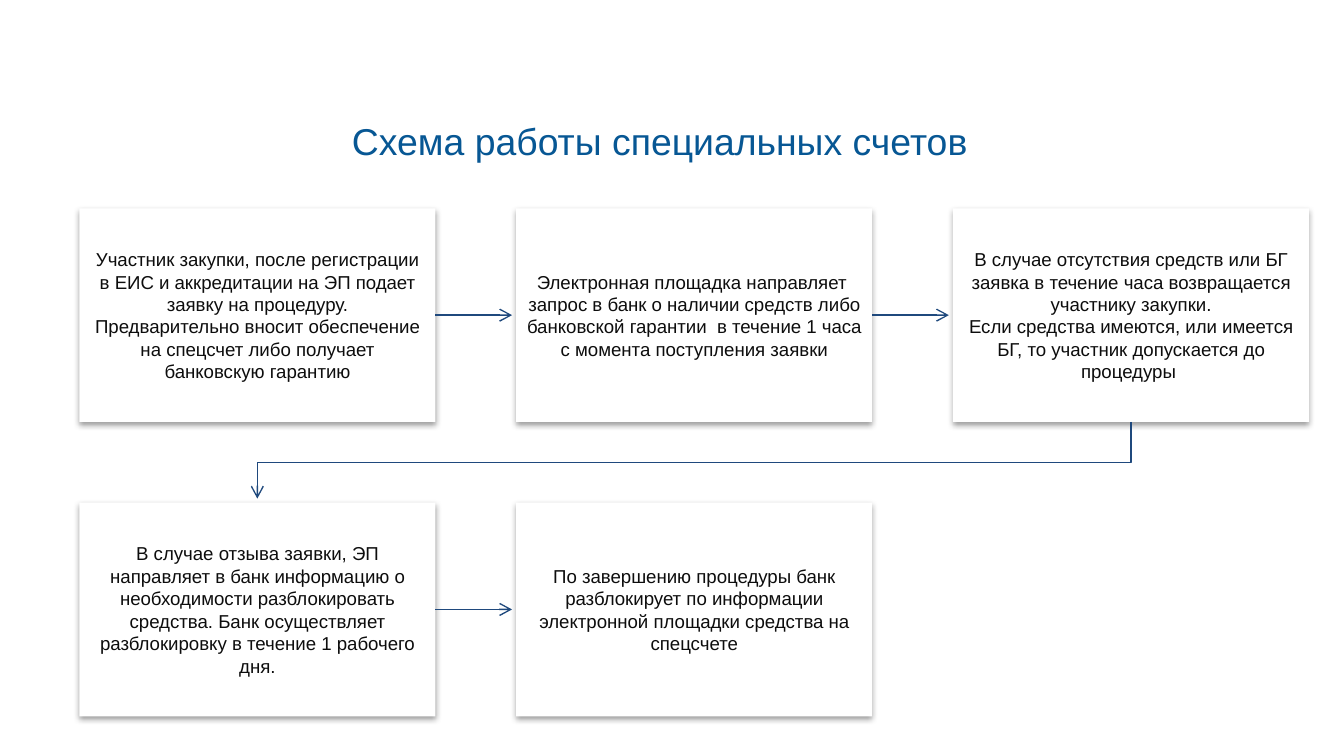
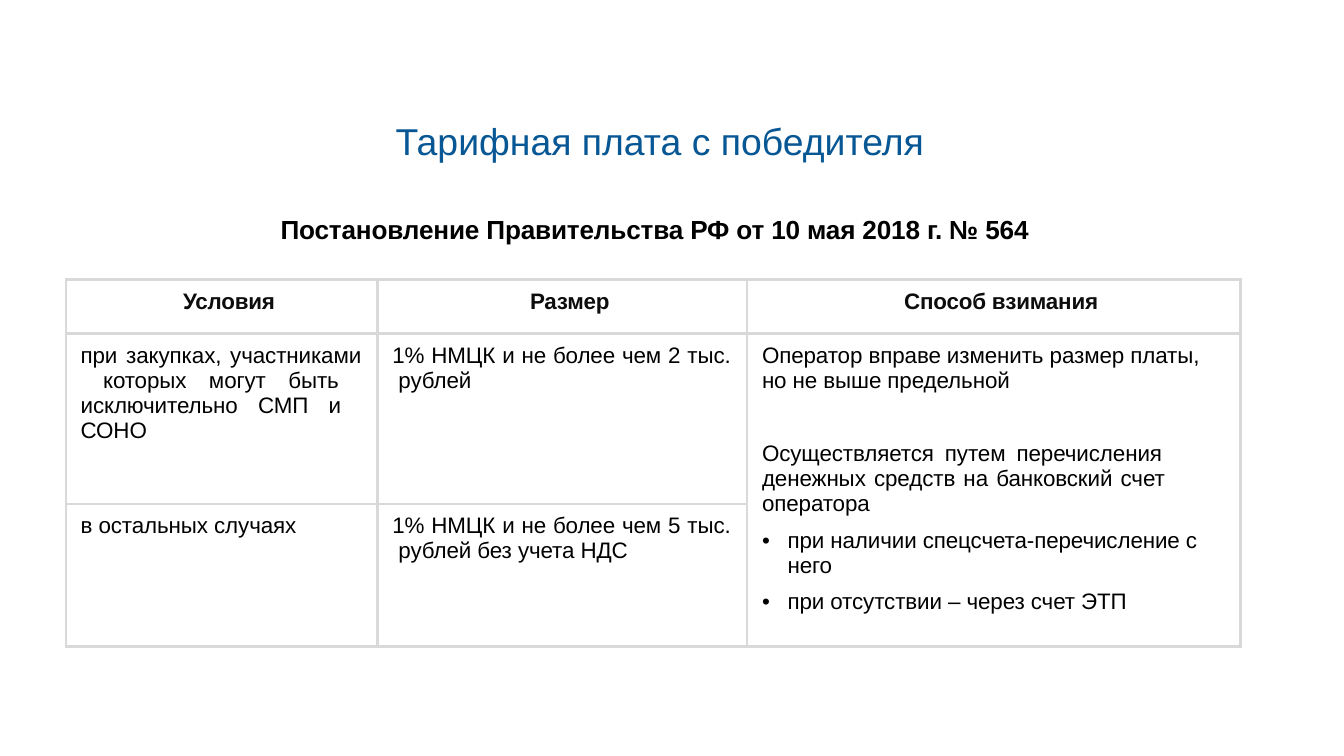
from dataclasses import dataclass
from typing import Any

from lxml.etree import SubElement
from pptx import Presentation
from pptx.dml.color import RGBColor
from pptx.enum.shapes import MSO_CONNECTOR, MSO_SHAPE
from pptx.enum.text import MSO_ANCHOR, PP_ALIGN
from pptx.oxml.ns import qn
from pptx.util import Inches, Pt

TITLE_BLUE = RGBColor(0x07, 0x57, 0x94)
ARROW_BLUE = RGBColor(0x1F, 0x49, 0x7D)
DARK = RGBColor(0x0D, 0x0D, 0x0D)
BLACK = RGBColor(0x00, 0x00, 0x00)
WHITE = RGBColor(0xFF, 0xFF, 0xFF)
BORDER_GREY = RGBColor(0xD9, 0xD9, 0xD9)
FONT = "Arial"

SLIDE_WIDTH = Inches(10)
SLIDE_HEIGHT = SLIDE_WIDTH * 9 // 16
BOX_WIDTH, BOX_HEIGHT = 2.65, 1.59
BOX_LEFT, BOX_TOP = 0.59, 1.55
COLUMN_STEP, ROW_STEP = 3.25, 2.19
ARROW_LENGTH = 0.57


@dataclass(frozen=True)
class TextStyle:
    size: float
    color: RGBColor
    bold: bool = False
    spacing: int = 0


@dataclass(frozen=True)
class Line:
    text: str
    align: PP_ALIGN = PP_ALIGN.CENTER
    left: float = 0
    right: float = 0
    indent: float = 0
    before: float = 0
    bullet: bool = False


@dataclass(frozen=True)
class Step:
    column: int
    row: int
    lines: tuple[str, ...]
    arrow: bool = False


@dataclass(frozen=True)
class CellText:
    row: int
    column: int
    lines: tuple[Line, ...]


TITLE_STYLE = TextStyle(20, TITLE_BLUE)
STEP_STYLE = TextStyle(10, DARK)
DECREE_STYLE = TextStyle(14, BLACK, True, -10)
HEADER_STYLE = TextStyle(12, DARK, True, -10)
BODY_STYLE = TextStyle(12, BLACK, False, -5)

STEPS = (
    Step(0, 0, (
        "Участник закупки, после регистрации в ЕИС и аккредитации на ЭП подает заявку на процедуру.",
        "Предварительно вносит обеспечение на спецсчет либо получает банковскую гарантию",
    ), True),
    Step(1, 0, (
        "Электронная площадка направляет  запрос в банк о наличии средств либо "
        "банковской гарантии  в течение 1 часа с момента поступления заявки",
    ), True),
    Step(2, 0, (
        "В случае отсутствия средств или БГ заявка в течение часа возвращается участнику закупки.",
        "Если средства имеются, или имеется БГ, то участник допускается до процедуры ",
    )),
    Step(0, 1, (
        "В случае отзыва заявки, ЭП направляет в банк информацию о необходимости "
        "разблокировать средства. Банк осуществляет разблокировку в течение 1 рабочего дня.",
    ), True),
    Step(1, 1, (
        "По завершению процедуры банк разблокирует по информации электронной площадки средства на спецсчете",
    )),
)

COLUMN_WIDTHS = (2.32, 2.75, 3.67)
ROW_HEIGHTS = (0.4, 1.27, 1.06)
CELL_LEFT = 0.11


def body_line(text: str, align: PP_ALIGN = PP_ALIGN.JUSTIFY,
              right: float = 0.12, before: float = 0) -> Line:
    return Line(text, align, CELL_LEFT, right, before=before)


def bullet_line(text: str, align: PP_ALIGN) -> Line:
    return Line(text, align, 0.3, 0, -0.19, 6, True)


CELLS = (
    *(CellText(0, column, (Line(heading, left=CELL_LEFT),))
      for column, heading in enumerate(("Условия", "Размер", "Способ взимания"))),
    CellText(1, 0, (body_line(
        "при закупках, участниками  которых могут быть  исключительно СМП и  СОНО"),)),
    CellText(1, 1, (body_line("1% НМЦК и не более чем 2 тыс.  рублей"),)),
    CellText(1, 2, (
        body_line("Оператор вправе изменить размер платы,  но не выше предельной", PP_ALIGN.LEFT),
        body_line("Осуществляется путем перечисления  денежных средств на банковский счет  оператора",
                  right=0.5, before=26),
        bullet_line("при наличии спецсчета-перечисление с  него", PP_ALIGN.LEFT),
        bullet_line("при отсутствии – через счет ЭТП", PP_ALIGN.JUSTIFY),
    )),
    CellText(2, 0, (body_line("в остальных случаях"),)),
    CellText(2, 1, (body_line("1% НМЦК и не более чем 5 тыс.  рублей без учета НДС"),)),
)


def apply_format(target: Any, values: dict[str, Any]) -> None:
    for name, value in values.items():
        setattr(target, name, value)


def write_lines(text_frame: Any, lines: tuple[Line, ...], style: TextStyle) -> None:
    for index, line in enumerate(lines):
        paragraph = text_frame.add_paragraph() if index else text_frame.paragraphs[0]
        properties = paragraph._p.get_or_add_pPr()
        for name, length in (("marL", line.left), ("marR", line.right), ("indent", line.indent)):
            properties.set(name, str(Inches(length)))
        if line.bullet:
            SubElement(properties, qn("a:buFont"), typeface=FONT)
            SubElement(properties, qn("a:buChar"), char="•")
        paragraph.alignment = line.align
        if line.before:
            paragraph.space_before = Pt(line.before)
        run = paragraph.add_run()
        run.text = line.text
        apply_format(run.font, {"name": FONT, "size": Pt(style.size), "bold": style.bold})
        run.font.color.rgb = style.color
        if style.spacing:
            run._r.get_or_add_rPr().set("spc", str(style.spacing))


def format_frame(text_frame: Any, margins: tuple[float, ...], anchor: MSO_ANCHOR) -> None:
    left, top, right, bottom = map(Inches, margins)
    apply_format(text_frame, {
        "word_wrap": True, "vertical_anchor": anchor,
        "margin_left": left, "margin_top": top, "margin_right": right, "margin_bottom": bottom,
    })


def add_text(slide: Any, area: tuple[float, ...], text: str, style: TextStyle,
             margins: tuple[float, ...], anchor: MSO_ANCHOR) -> None:
    text_frame = slide.shapes.add_textbox(*map(Inches, area)).text_frame
    format_frame(text_frame, margins, anchor)
    write_lines(text_frame, (Line(text),), style)


def add_titled_slide(presentation: Any, title: str) -> Any:
    slide = presentation.slides.add_slide(presentation.slide_layouts[6])
    add_text(slide, (0.2, 0.69, 9.42, 0.71), title, TITLE_STYLE,
             (0.1, 0.05, 0.1, 0.05), MSO_ANCHOR.MIDDLE)
    return slide


def add_step_box(slide: Any, step: Step) -> Any:
    shape = slide.shapes.add_shape(
        MSO_SHAPE.RECTANGLE,
        Inches(BOX_LEFT + step.column * COLUMN_STEP), Inches(BOX_TOP + step.row * ROW_STEP),
        Inches(BOX_WIDTH), Inches(BOX_HEIGHT))
    shape.fill.solid()
    shape.fill.fore_color.rgb = WHITE
    shape.line.fill.background()
    shape.shadow.inherit = False
    effects = shape._element.spPr.find(qn("a:effectLst"))
    shadow = SubElement(effects, qn("a:outerShdw"), blurRad=str(Pt(3.1)), dist=str(Pt(1.6)),
                        dir="5400000", rotWithShape="0")
    color = SubElement(shadow, qn("a:srgbClr"), val=str(BLACK))
    SubElement(color, qn("a:alpha"), val="38000")
    format_frame(shape.text_frame, (0.08,) * 4, MSO_ANCHOR.MIDDLE)
    write_lines(shape.text_frame, tuple(map(Line, step.lines)), STEP_STYLE)
    return shape


def style_arrow(arrow: Any) -> None:
    arrow.line.color.rgb = ARROW_BLUE
    arrow.line.width = Pt(0.75)
    SubElement(arrow.line._get_or_add_ln(), qn("a:tailEnd"), type="arrow")


def add_next_arrow(slide: Any, box: Any) -> None:
    start = box.left + box.width
    middle = box.top + box.height // 2
    connector = slide.shapes.add_connector(
        MSO_CONNECTOR.STRAIGHT, start, middle, start + Inches(ARROW_LENGTH), middle)
    connector.begin_connect(box, 3)
    style_arrow(connector)
    SubElement(connector._element.spPr, qn("a:effectLst"))


def add_return_arrow(slide: Any, source: Any, target: Any) -> None:
    start_x = source.left + source.width // 2
    end_x = target.left + target.width // 2
    start_y = source.top + source.height
    bend_y = (start_y + target.top) // 2
    builder = slide.shapes.build_freeform(start_x, start_y)
    builder.add_line_segments(
        [(start_x, bend_y), (end_x, bend_y), (end_x, target.top - Inches(0.03))], close=False)
    arrow = builder.convert_to_shape()
    arrow.fill.background()
    arrow.shadow.inherit = False
    style_arrow(arrow)


def add_cell_borders(cell: Any) -> None:
    properties = cell._tc.get_or_add_tcPr()
    for index, side in enumerate(("lnL", "lnR", "lnT", "lnB")):
        border = properties.makeelement(qn(f"a:{side}"), {"w": str(Pt(1.5))})
        fill = SubElement(border, qn("a:solidFill"))
        SubElement(fill, qn("a:srgbClr"), val=str(BORDER_GREY))
        properties.insert(index, border)


def add_fee_table(slide: Any) -> None:
    table = slide.shapes.add_table(
        len(ROW_HEIGHTS), len(COLUMN_WIDTHS), Inches(0.49), Inches(2.08),
        Inches(sum(COLUMN_WIDTHS)), Inches(sum(ROW_HEIGHTS))).table
    apply_format(table, {"first_row": False, "horz_banding": False})
    for column, width in zip(table.columns, COLUMN_WIDTHS):
        column.width = Inches(width)
    for row, height in zip(table.rows, ROW_HEIGHTS):
        row.height = Inches(height)
    for cell in table.iter_cells():
        cell.fill.solid()
        cell.fill.fore_color.rgb = WHITE
        add_cell_borders(cell)
    table.cell(1, 2).merge(table.cell(2, 2))
    for content in CELLS:
        cell = table.cell(content.row, content.column)
        apply_format(cell, {
            "margin_left": 0, "margin_top": Inches(0.07), "margin_right": 0,
            "margin_bottom": 0, "vertical_anchor": MSO_ANCHOR.TOP,
        })
        write_lines(cell.text_frame, content.lines, BODY_STYLE if content.row else HEADER_STYLE)


def build_accounts_slide(presentation: Any) -> None:
    slide = add_titled_slide(presentation, "Схема работы специальных счетов")
    boxes = {(step.column, step.row): add_step_box(slide, step) for step in STEPS}
    for step in STEPS:
        if step.arrow:
            add_next_arrow(slide, boxes[step.column, step.row])
    add_return_arrow(slide, boxes[2, 0], boxes[0, 1])


def build_fee_slide(presentation: Any) -> None:
    slide = add_titled_slide(presentation, "Тарифная плата с победителя")
    add_text(slide, (0.49, 1.58, 8.76, 0.25),
             "Постановление Правительства РФ от 10 мая 2018 г. № 564",
             DECREE_STYLE, (0, 0.01, 0, 0), MSO_ANCHOR.TOP)
    add_fee_table(slide)


def main() -> None:
    presentation = Presentation()
    apply_format(presentation, {"slide_width": SLIDE_WIDTH, "slide_height": SLIDE_HEIGHT})
    build_accounts_slide(presentation)
    build_fee_slide(presentation)
    presentation.save("out.pptx")


if __name__ == "__main__":
    main()
